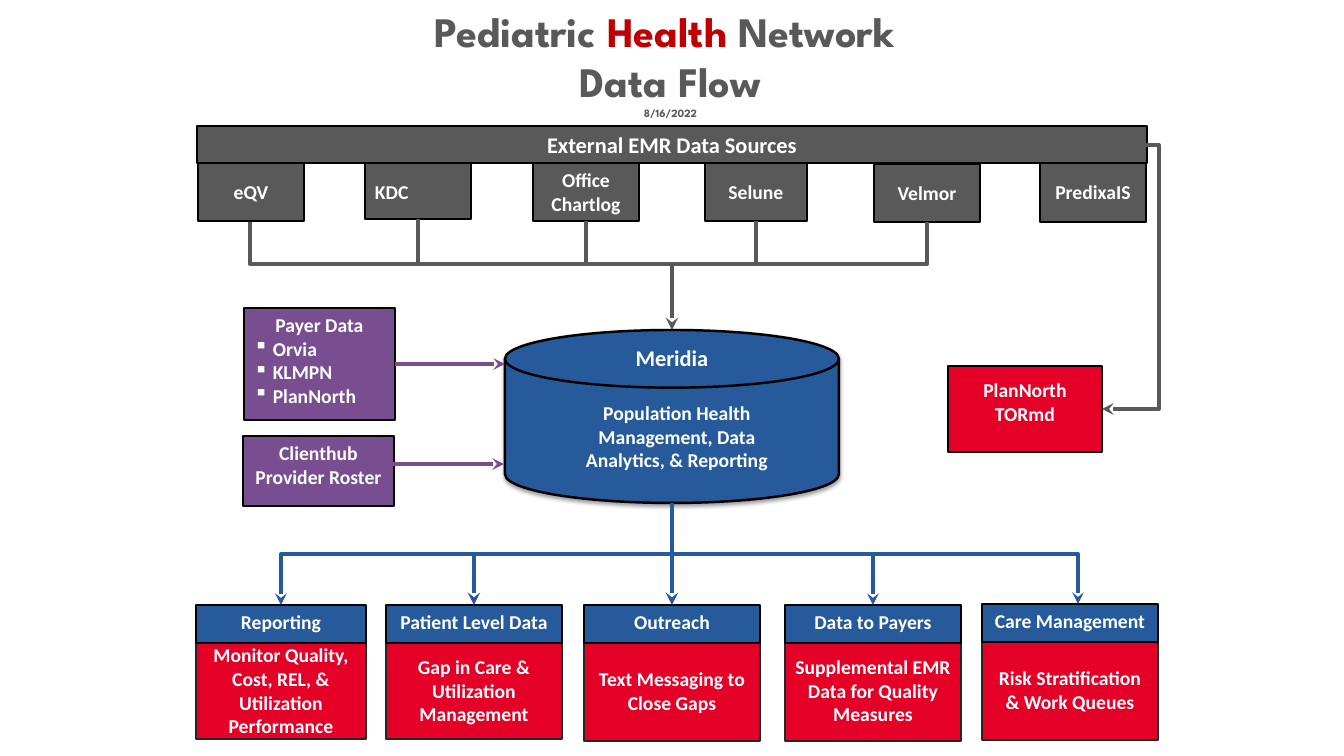
"""Builds the Pediatric Health Network data flow slide."""
from lxml import etree
from pptx import Presentation
from pptx import util as u
from pptx.dml.color import RGBColor
from pptx.enum import shapes, text
from pptx.oxml.ns import qn

PX = 914400 / 100.8
WHITE = RGBColor(0xFF, 0xFF, 0xFF)
BLACK = RGBColor(0x00, 0x00, 0x00)
DARK = RGBColor(0x26, 0x26, 0x26)
GRAY = RGBColor(0x59, 0x59, 0x59)
BLUE = RGBColor(0x26, 0x5A, 0x9A)
RED = RGBColor(0xE4, 0x00, 0x26)
TITLE_RED = RGBColor(0xC0, 0x00, 0x00)
PURPLE = RGBColor(0x78, 0x4E, 0x90)
RECT = shapes.MSO_SHAPE.RECTANGLE
STRAIGHT = shapes.MSO_CONNECTOR.STRAIGHT
ELBOW = shapes.MSO_CONNECTOR.ELBOW
TOP = text.MSO_ANCHOR.TOP
MIDDLE = text.MSO_ANCHOR.MIDDLE
LEFT = text.PP_ALIGN.LEFT
CENTER = text.PP_ALIGN.CENTER

prs = Presentation()
prs.slide_width, prs.slide_height = round(1344 * PX), round(756 * PX)
s = prs.slides.add_slide(prs.slide_layouts[5])


def box(x, y, w, h, fill, lines=(), edge=BLACK, edge_pt=1.75, size=14,
        anchor=TOP, spacing=None, kind=RECT):
    """Add a filled shape with bold white centred lines."""
    sp = s.shapes.add_shape(kind, *(round(v * PX) for v in (x, y, w, h)))
    sp.shadow.inherit = False
    sp.fill.solid()
    sp.fill.fore_color.rgb = fill
    if edge is None:
        sp.line.fill.background()
    else:
        sp.line.color.rgb = edge
        sp.line.width = u.Pt(edge_pt)
    tf = sp.text_frame
    tf.word_wrap = True
    tf.vertical_anchor = anchor
    for i, line in enumerate(lines):
        p = tf.paragraphs[0] if i == 0 else tf.add_paragraph()
        p.alignment = CENTER
        if i == 0 and spacing:
            p.line_spacing = spacing
        r = p.add_run()
        r.text = line
        r.font.name, r.font.size, r.font.bold = "Calibri", u.Pt(size), True
        r.font.color.rgb = WHITE
    return sp


def wire(x1, y1, x2, y2, color, width=2.8, arrow=False, kind=STRAIGHT, start=None, end=None):
    """Add a connector; start and end are (shape, site) pairs."""
    cx = s.shapes.add_connector(kind, *(round(v * PX) for v in (x1, y1, x2, y2)))
    if start:
        cx.begin_connect(*start)
    if end:
        cx.end_connect(*end)
    cx.line.color.rgb = color
    cx.line.width = u.Pt(width)
    spPr = cx.element.spPr
    if arrow:
        etree.SubElement(spPr.find(qn("a:ln")), qn("a:tailEnd"), type="stealth")
    etree.SubElement(spPr, qn("a:effectLst"))
    return spPr.find(qn("a:prstGeom"))


title = s.shapes.title
title.left, title.top, title.width, title.height = (round(v * PX) for v in (165, 0, 1011, 126))
tf = title.text_frame
tf.word_wrap = True
tf.auto_size = text.MSO_AUTO_SIZE.NONE
tf.vertical_anchor = TOP
title_lines = [
    (30, [("Pediatric ", GRAY), ("Health", TITLE_RED), (" Network ", GRAY)]),
    (30, [("Data Flow", GRAY)]),
    (8, [("8/16/2022", GRAY)]),
]
for i, (size, runs) in enumerate(title_lines):
    p = tf.paragraphs[0] if i == 0 else tf.add_paragraph()
    p.alignment = CENTER
    for words, color in runs:
        r = p.add_run()
        r.text = words
        r.font.name, r.font.size, r.font.bold = "League Spartan", u.Pt(size), True
        r.font.color.rgb = color

box(197, 126, 950, 37, GRAY, ["External EMR Data Sources"], size=16)
sources = {}
for name, x, y, w, h, spacing in [
    ("eQV", 198, 163, 106, 58, 1.5),
    ("KDC", 365, 163, 106, 56, 1.5),
    ("Office Chartlog", 533, 163, 106, 58, None),
    ("Selune", 705, 163, 102, 58, 1.5),
    ("Velmor", 874, 164, 106, 58, 1.5),
    ("PredixaIS", 1040, 163, 106, 59, 1.5),
]:
    sources[name] = box(x, y, w, h, GRAY, [name], spacing=spacing)
sources["KDC"].text_frame.paragraphs[0].alignment = LEFT

for x in (250, 927):
    wire(672, 264, x, 222, GRAY, 3, kind=ELBOW).set("prst", "bentConnector2")
for name, x in [("KDC", 418), ("Office Chartlog", 586), ("Selune", 756)]:
    wire(x, 221, x, 264, GRAY, start=(sources[name], 2))
wire(672, 264, 672, 330, GRAY, 3, arrow=True)

store = box(505, 330, 334, 173, BLUE, kind=shapes.MSO_SHAPE.FLOWCHART_MAGNETIC_DISK)
shadow = etree.SubElement(store.element.spPr.find(qn("a:effectLst")), qn("a:outerShdw"),
                          blurRad="39370", dist="20320", dir="5400000", rotWithShape="0")
shade = etree.SubElement(shadow, qn("a:srgbClr"), val="000000")
etree.SubElement(shade, qn("a:alpha"), val="38000")
box(591, 339, 162, 37, BLUE, ["Meridia"], edge=None, size=16)
box(555, 396, 244, 82, BLUE, ["Population Health Management, Data Analytics, & Reporting"],
    edge=None)

payer = box(244, 308, 151, 112, PURPLE, ["Payer Data", "Orvia", "KLMPN", "PlanNorth"])
for p in payer.text_frame.paragraphs[1:]:
    p.alignment = LEFT
    pPr = p._p.get_or_add_pPr()
    pPr.set("marL", "171450")
    pPr.set("indent", "-171450")
    etree.SubElement(pPr, qn("a:buChar"), char="▪")
box(243, 436, 151, 70, PURPLE, ["Clienthub", "Provider Roster"])
wire(395, 364, 505, 364, PURPLE, arrow=True, start=(payer, 3))
wire(393, 464, 504, 464, PURPLE, arrow=True)

box(948, 366, 154, 86, RED, ["PlanNorth", "TORmd"], spacing=u.Pt(22))
detour = wire(1145, 145, 1102, 409, GRAY, arrow=True, kind=ELBOW)
guides = detour.find(qn("a:avLst"))
if guides is None:
    guides = etree.SubElement(detour, qn("a:avLst"))
etree.SubElement(guides, qn("a:gd"), name="adj1", fmla="val -32000")

heads = []
for head, x, w, y, body_y, body_h, lines in [
    ("Reporting", 196, 170, 605, 642, 97,
     ["Monitor Quality,", "Cost, REL, & Utilization Performance"]),
    ("Patient Level Data", 386, 176, 605, 642, 97, ["Gap in Care & Utilization Management"]),
    ("Outreach", 584, 176, 605, 640, 101, ["Text Messaging to Close Gaps"]),
    ("Data to Payers", 785, 176, 605, 640, 101, ["Supplemental EMR Data for Quality Measures"]),
    ("Care Management", 982, 176, 604, 639, 101, ["Risk Stratification", "& Work Queues"]),
]:
    box(x, body_y, w, body_h, RED, lines, edge=DARK, edge_pt=1, anchor=MIDDLE)
    heads.append(box(x, y, w, 38, BLUE, [head]))

for x, y in [(281, 605), (873, 605), (1078, 604)]:
    wire(672, 554, x, y, BLUE, arrow=True, kind=ELBOW).set("prst", "bentConnector2")
wire(474, 554, 474, 605, BLUE, 3, arrow=True, end=(heads[1], 0))
wire(672, 503, 672, 605, BLUE, 3, arrow=True, end=(heads[2], 0))

prs.save("out.pptx")
